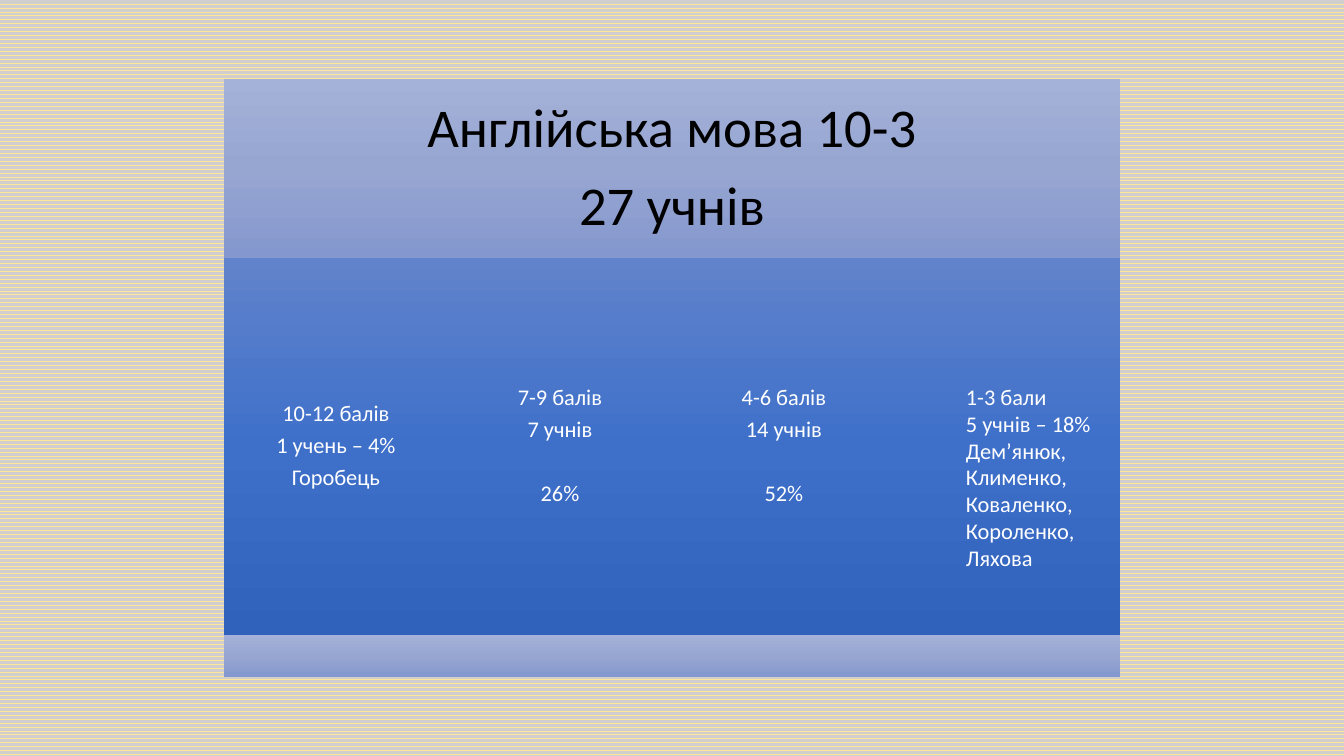
from copy import deepcopy
from pptx import Presentation
from pptx.dml.color import RGBColor as RGB
from pptx.enum.dml import MSO_PATTERN as Pattern
from pptx.enum.shapes import MSO_SHAPE as Kind
from pptx.enum.text import MSO_ANCHOR as Anchor, MSO_AUTO_SIZE as Fit, PP_ALIGN as Align
from pptx.oxml.ns import qn
from pptx.util import Pt

PX = 914400 / 100.8
LIGHT = ("A4B2D9", "97A6D1", "8497CE")
DEEP = ("6183CB", "3E70CA", "3062BB")


def paint(shape, tones):
    """Fill a panel from top to bottom with three tones."""
    fill = shape.fill
    fill.gradient()
    fill.gradient_angle = 270
    stops = next(shape.element.iter(qn("a:gsLst")))
    stops.append(deepcopy(stops[0]))
    for stop, tone, place in zip(fill.gradient_stops, tones, (0, 0.5, 1)):
        stop.color.rgb = RGB.from_string(tone)
        stop.position = place
    shape.line.fill.background()


def write(frame, lines, size, tone, inset=0, spaced=True):
    """Write lines; an empty one becomes a gap above the next."""
    if spaced:
        frame.vertical_anchor = Anchor.MIDDLE
        frame.margin_left = frame.margin_right = round(inset * PX)
        frame.margin_top = frame.margin_bottom = round(inset * PX)
    gap, para = 0, None
    for line in lines:
        if not line:
            gap = size * 1.45
            continue
        para = frame.add_paragraph() if para else frame.paragraphs[0]
        if spaced:
            para.alignment = Align.CENTER
            para.line_spacing = 0.9
            para.space_before = Pt(gap)
            para.space_after = Pt(size * 0.35)
        run = para.add_run()
        run.text = line
        run.font.name = "Calibri"
        run.font.size = Pt(size)
        run.font.color.rgb = RGB.from_string(tone)
        gap = 0


deck = Presentation()
deck.slide_width, deck.slide_height = round(1344 * PX), round(756 * PX)
slide = deck.slides.add_slide(deck.slide_layouts[5])

# Background
back = slide.background.fill
back.patterned()
back.pattern = Pattern.WAVE
back.fore_color.rgb = RGB.from_string("FFE699")
back.back_color.rgb = RGB.from_string("D0CECE")

# Title panel
title = slide.shapes.title
title.left, title.top, title.width, title.height = (
    round(n * PX) for n in (224, 79, 896, 179))
paint(title, LIGHT)
title.text_frame.auto_size = Fit.NONE
write(title.text_frame, ["Англійська мова 10-3", "27 учнів"], 39, "000000", 16)

# Score columns
groups = [
    ["10-12 балів", "1 учень – 4%", "Горобець"],
    ["7-9 балів", "7 учнів", "", "26%"],
    ["4-6 балів", "14 учнів", "", "52%"],
    [],
]
for i, lines in enumerate(groups):
    box = [round(n * PX) for n in (224 + 224 * i, 258, 224, 377)]
    panel = slide.shapes.add_shape(Kind.RECTANGLE, *box)
    panel.shadow.inherit = False
    paint(panel, DEEP)
    panel.text_frame.word_wrap = True
    write(panel.text_frame, lines, 16, "FFFFFF", 7)

# Bottom strip
strip = slide.shapes.add_shape(
    Kind.RECTANGLE, *[round(n * PX) for n in (224, 635, 896, 42)])
strip.shadow.inherit = False
paint(strip, LIGHT)

# Names in the last column
names = slide.shapes.add_textbox(*[round(n * PX) for n in (956, 378, 146, 228)])
names.text_frame.word_wrap = False
names.text_frame.auto_size = Fit.SHAPE_TO_FIT_TEXT
write(names.text_frame, ["1-3 бали", "5 учнів – 18%", "Дем’янюк,", "Клименко,",
                         "Коваленко,", "Короленко,", "Ляхова"],
      16, "FFFFFF", spaced=False)

deck.save("out.pptx")
